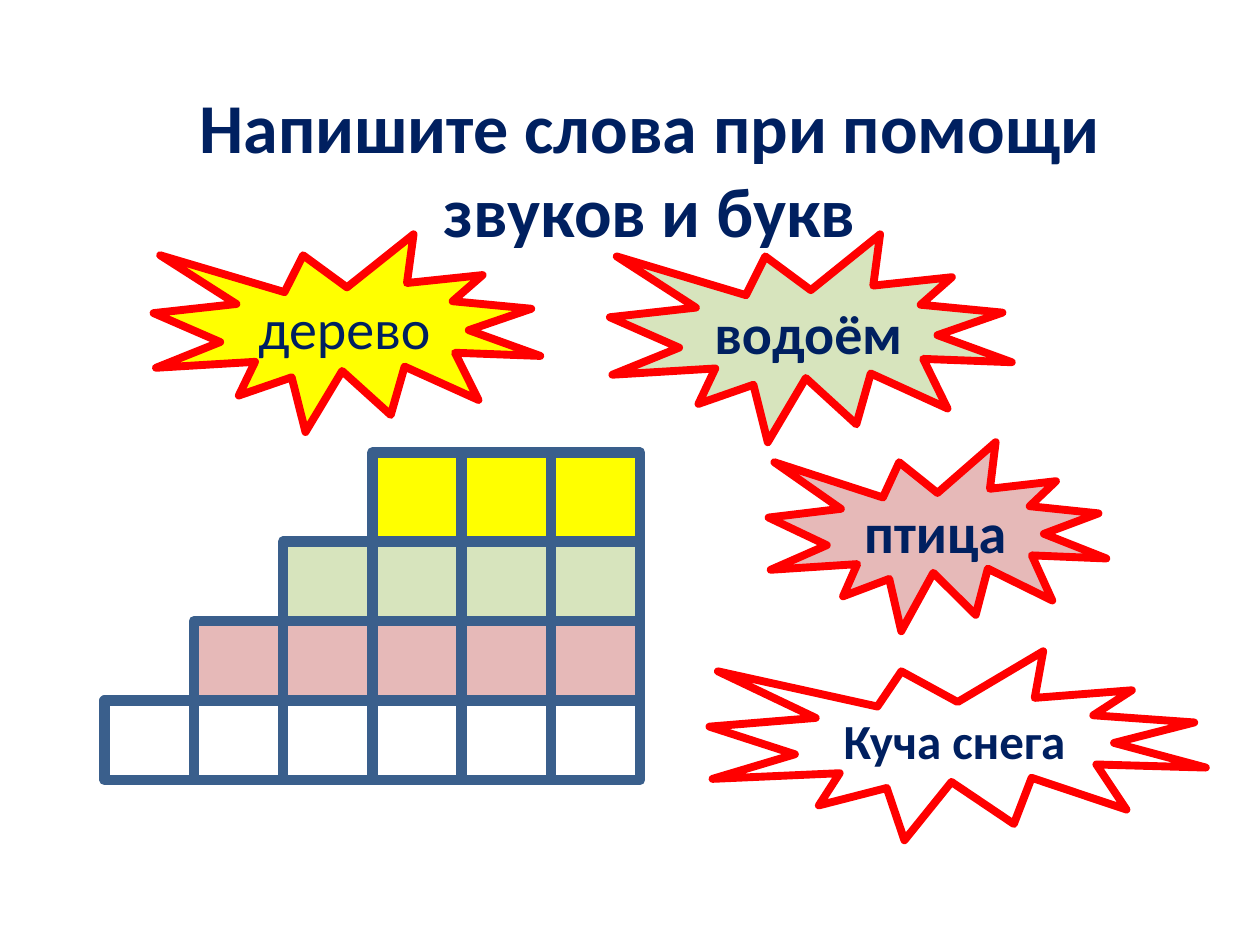
"""Build a word puzzle slide with a staircase of letter cells and clue bursts."""
from pptx import Presentation
from pptx.dml.color import RGBColor
from pptx.enum import shapes, text
from pptx.util import Pt

THEME = {
    "font": "Calibri", "ink": "002060", "title_size": 40,
    "cell_line": "3A5F8C", "cell_line_width": 6,
    "burst_line": "FF0000", "burst_line_width": 4.5,
    "yellow": "FFFF00", "green": "D7E4BD", "pink": "E6B9B8", "white": "FFFFFF",
}
TITLE = ["Напишите слова при помощи", "звуков и букв"]
TITLE_BOX = (14.4, 0, 705.6, 147.6)
TITLE_MARGINS = {"margin_left": Pt(15), "margin_top": Pt(47.5)}
STAIRS = [(3, "yellow", 51), (4, "green", 45.4), (5, "pink", 45.4), (6, "white", 45.4)]
STAIRS_RIGHT, STAIRS_TOP, CELL_WIDTH = 365.8, 258.6, 51
BURSTS = [
    ("водоём", "green", 32, True, (348.5, 133.9, 229.7, 118.8)),
    ("дерево", "yellow", 32, False, (87.8, 133.9, 221, 113)),
    ("птица", "pink", 32, True, (439.2, 252.7, 193, 108)),
    ("Куча снега", "white", 28, True, (405.4, 372.2, 283.7, 108)),
]


def color(name):
    return RGBColor.from_string(THEME[name])


def write(frame, lines, size, bold, **settings):
    for name, value in {"word_wrap": True, **settings}.items():
        setattr(frame, name, value)
    for index, line in enumerate(lines):
        paragraph = frame.add_paragraph() if index else frame.paragraphs[0]
        paragraph.alignment = text.PP_ALIGN.CENTER
        run = paragraph.add_run()
        run.text = line
        font_format = {"name": THEME["font"], "size": Pt(size), "bold": bold}
        for name, value in font_format.items():
            setattr(run.font, name, value)
        run.font.color.rgb = color("ink")


def add_figure(slide, kind, box, fill, line):
    shape = slide.shapes.add_shape(kind, *map(Pt, box))
    shape.shadow.inherit = False
    shape.fill.solid()
    shape.fill.fore_color.rgb = color(fill)
    shape.line.color.rgb = color(line)
    shape.line.width = Pt(THEME[line + "_width"])
    return shape


def add_stairs(slide):
    top = STAIRS_TOP
    for count, fill, height in STAIRS:
        for column in range(count):
            left = STAIRS_RIGHT - (count - column) * CELL_WIDTH
            add_figure(slide, shapes.MSO_SHAPE.RECTANGLE,
                       (left, top, CELL_WIDTH, height), fill, "cell_line")
        top += height


def main():
    presentation = Presentation()
    presentation.slide_width, presentation.slide_height = Pt(720), Pt(540)
    slide = presentation.slides.add_slide(presentation.slide_layouts[6])
    title = slide.shapes.add_textbox(*map(Pt, TITLE_BOX))
    write(title.text_frame, TITLE, THEME["title_size"], True, **TITLE_MARGINS)
    add_stairs(slide)
    for word, fill, size, bold, box in BURSTS:
        burst = add_figure(slide, shapes.MSO_SHAPE.EXPLOSION1, box, fill, "burst_line")
        write(burst.text_frame, [word], size, bold,
              vertical_anchor=text.MSO_ANCHOR.MIDDLE)
    presentation.save("out.pptx")


if __name__ == "__main__":
    main()
